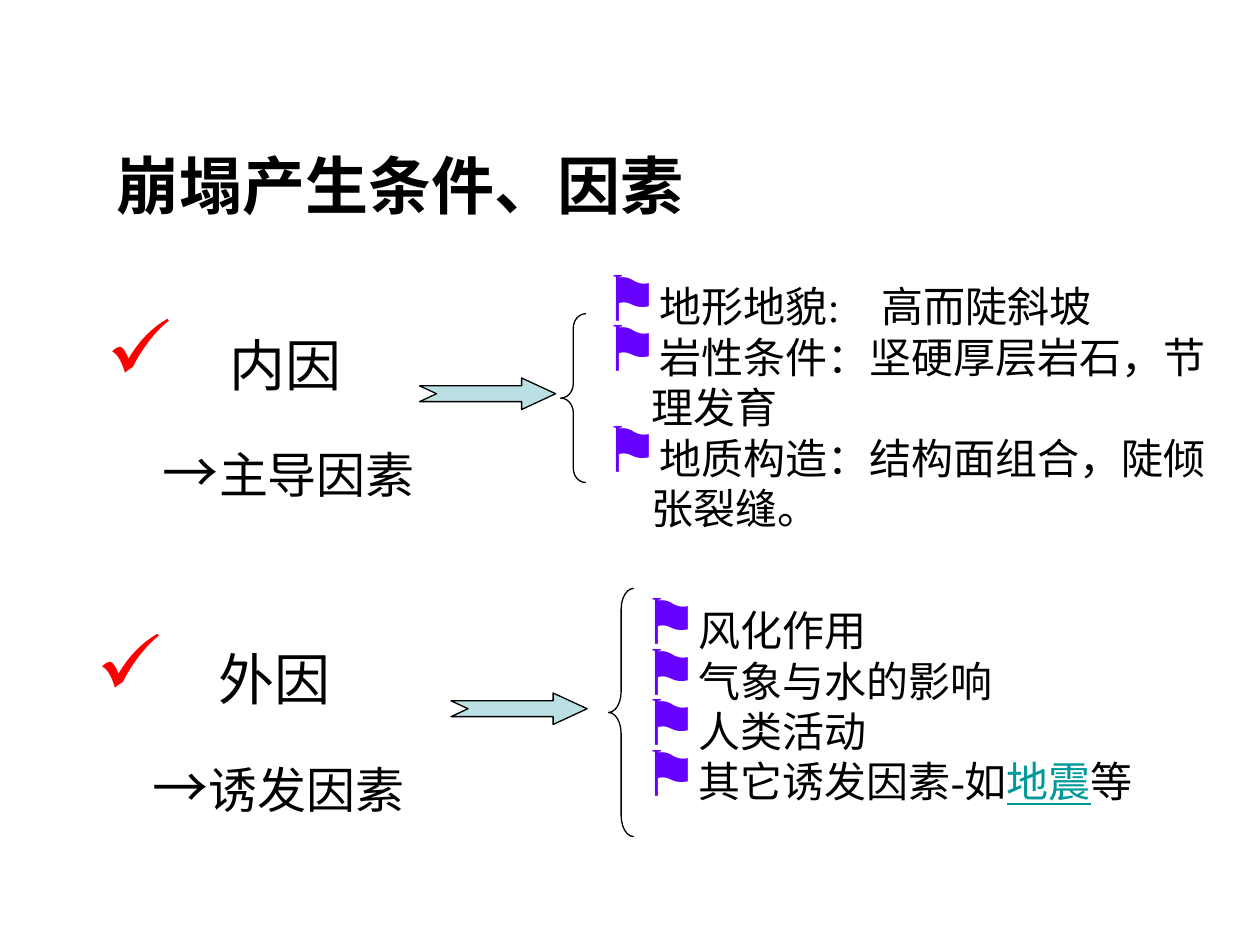
from dataclasses import dataclass

from lxml.etree import SubElement
from pptx import Presentation
from pptx.dml.color import RGBColor
from pptx.enum.shapes import MSO_SHAPE
from pptx.enum.text import MSO_ANCHOR
from pptx.oxml.ns import qn
from pptx.util import Inches, Pt

BLACK = RGBColor(0x00, 0x00, 0x00)
RED = RGBColor(0xFF, 0x00, 0x00)
VIOLET = RGBColor(0x66, 0x00, 0xFF)
TEAL = RGBColor(0x00, 0x99, 0x99)
PALE = RGBColor(0xBB, 0xE0, 0xE3)

TITLE = {"name": "Arial", "size": Pt(36), "bold": True}
CAUSE = {"name": "Times New Roman", "size": Pt(32)}
ROLE = {**CAUSE, "size": Pt(28)}
ITEM = {**CAUSE, "size": Pt(24)}
LINK = {**ITEM, "underline": True}

Box = tuple[float, float, float, float]


@dataclass(frozen=True)
class Run:
    text: str
    style: dict
    color: RGBColor = BLACK


@dataclass(frozen=True)
class Mark:
    char: str
    color: RGBColor


@dataclass(frozen=True)
class Line:
    runs: list[Run]
    mark: Mark | None = None


@dataclass(frozen=True)
class Group:
    cause: str
    role: str
    label: Box
    arrow: Box
    brace: Box
    bend: float
    list_box: Box
    items: list[list[Run]]


CHECK = Mark("✓", RED)
FLAG = Mark("⚑", VIOLET)

GROUPS = [
    Group(
        "内因", "主导因素",
        label=(0.75, 2.25, 2.92, 1.75), arrow=(3.33, 3, 1.08, 0.25),
        brace=(4.45, 2.49, 0.2, 1.34), bend=0.57,
        list_box=(4.69, 2.18, 5.31, 2.28),
        items=[
            [Run("地形地貌:　高而陡斜坡", ITEM)],
            [Run("岩性条件：坚硬厚层岩石，节理发育", ITEM)],
            [Run("地质构造：结构面组合，陡倾张裂缝。", ITEM)],
        ],
    ),
    Group(
        "外因", "诱发因素",
        label=(0.67, 4.75, 2.92, 1.83), arrow=(3.58, 5.5, 1.08, 0.25),
        brace=(4.83, 4.67, 0.2, 1.97), bend=0.83,
        list_box=(5, 4.75, 4.42, 2),
        items=[
            [Run("风化作用", ITEM)],
            [Run("气象与水的影响", ITEM)],
            [Run("人类活动", ITEM)],
            [Run("其它诱发因素-如", ITEM), Run("地震", LINK, TEAL), Run("等", ITEM)],
        ],
    ),
]


def hang(para, mark: Mark | None) -> None:
    """Give a paragraph a hanging indent and, if asked, a bullet."""
    props = para._p.get_or_add_pPr()
    props.set("marL", str(Inches(0.38)))
    props.set("indent", str(-Inches(0.38)))
    if mark is None:
        SubElement(props, qn("a:buNone"))
        return
    tint = SubElement(props, qn("a:buClr"))
    SubElement(tint, qn("a:srgbClr"), val=str(mark.color))
    SubElement(props, qn("a:buSzPct"), val="150000")
    SubElement(props, qn("a:buChar"), char=mark.char)


def add_run(para, run: Run) -> None:
    part = para.add_run()
    part.text = run.text
    for key, value in run.style.items():
        setattr(part.font, key, value)
    part.font.color.rgb = run.color


def add_text(slide, box: Box, lines: list[Line], space: float = 1.0):
    frame = slide.shapes.add_textbox(*map(Inches, box)).text_frame
    frame.word_wrap = True
    for num, line in enumerate(lines):
        para = frame.add_paragraph() if num else frame.paragraphs[0]
        hang(para, line.mark)
        para.line_spacing = space
        for run in line.runs:
            add_run(para, run)
    return frame


def add_form(slide, kind: MSO_SHAPE, box: Box, bends: list[float],
             fill: RGBColor | None = None) -> None:
    form = slide.shapes.add_shape(kind, *map(Inches, box))
    form.shadow.inherit = False
    for num, bend in enumerate(bends):
        form.adjustments[num] = bend
    if fill is None:
        form.fill.background()
    else:
        form.fill.solid()
        form.fill.fore_color.rgb = fill
    form.line.color.rgb = BLACK
    form.line.width = Pt(0.75)


def add_group(slide, group: Group) -> None:
    label = [
        Line([Run("　" + group.cause, CAUSE)], CHECK),
        Line([Run("　→", CAUSE), Run(group.role, ROLE)]),
    ]
    add_text(slide, group.label, label, 1.6)
    add_form(slide, MSO_SHAPE.LEFT_BRACE, group.brace, [group.bend, 0.5])
    add_text(slide, group.list_box, [Line(runs, FLAG) for runs in group.items])
    add_form(slide, MSO_SHAPE.NOTCHED_RIGHT_ARROW, group.arrow, [0.5, 1.08], PALE)


def main() -> None:
    deck = Presentation()
    deck.slide_width, deck.slide_height = Inches(10), Inches(7.5)
    slide = deck.slides.add_slide(deck.slide_layouts[6])
    title = slide.shapes.add_textbox(*map(Inches, (0.83, 0.84, 8.5, 1.25)))
    frame = title.text_frame
    frame.word_wrap = True
    frame.vertical_anchor = MSO_ANCHOR.MIDDLE
    add_run(frame.paragraphs[0], Run("崩塌产生条件、因素", TITLE))
    for group in GROUPS:
        add_group(slide, group)
    deck.save("out.pptx")


if __name__ == "__main__":
    main()
